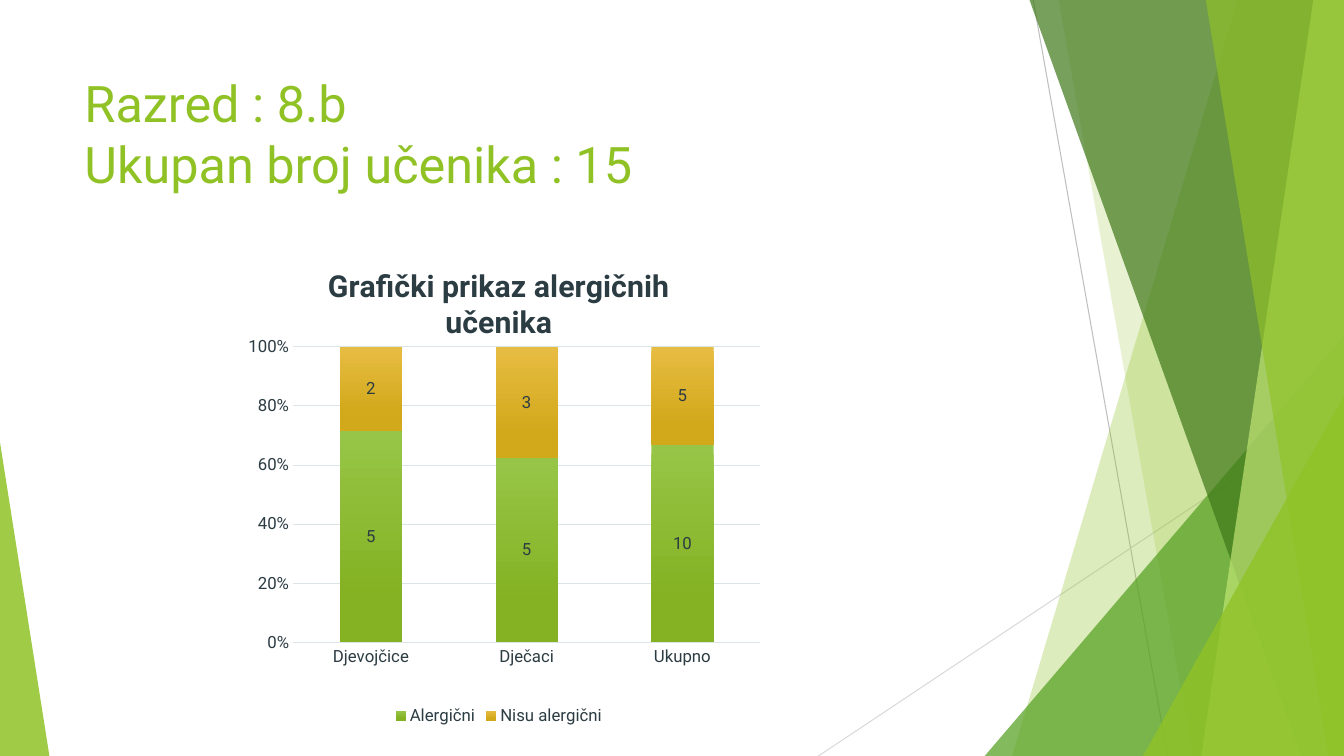
from lxml import etree
from pptx import Presentation
from pptx.chart.data import CategoryChartData
from pptx.dml.color import RGBColor
from pptx.enum.chart import XL_CHART_TYPE as ChartType
from pptx.enum.chart import XL_LABEL_POSITION as LabelPos
from pptx.enum.chart import XL_LEGEND_POSITION as LegendPos
from pptx.enum.chart import XL_TICK_MARK as TickMark
from pptx.enum.shapes import MSO_CONNECTOR as Connector
from pptx.enum.shapes import MSO_SHAPE as Shape
from pptx.enum.text import MSO_ANCHOR as Anchor
from pptx.oxml import parse_xml
from pptx.oxml.ns import nsdecls, qn
from pptx.util import Pt

WIDTH, HEIGHT = 960, 540
TOP = -0.6
FONT = "Roboto"

GREEN = RGBColor(0x90, 0xC2, 0x26)
LEAF = RGBColor(0x54, 0xA0, 0x21)
FOREST = RGBColor(0x3F, 0x78, 0x19)
LIME = RGBColor(0xC0, 0xE4, 0x74)
MID_GRAY = RGBColor(0xBF, 0xBF, 0xBF)
LIGHT_GRAY = RGBColor(0xD9, 0xD9, 0xD9)
SLATE = RGBColor(0x2C, 0x3C, 0x43)
GRID = RGBColor(0xDB, 0xE4, 0xE7)

# Series: name, values, gradient from top to bottom
SERIES = [
    ("Alergični", (5, 5, 10), (RGBColor(0x97, 0xC5, 0x47), RGBColor(0x84, 0xB2, 0x23))),
    ("Nisu alergični", (2, 3, 5), (RGBColor(0xE7, 0xBC, 0x43), RGBColor(0xD2, 0xA9, 0x1B))),
]


def style_font(font, size, color, bold=False):
    font.name, font.size, font.bold = FONT, Pt(size), bold
    font.color.rgb = color


def style_line(line, color):
    line.color.rgb = color
    line.width = Pt(0.75)


def tint(shape, color, opacity):
    """Fill a shape with a see-through colour and no outline."""
    shape.shadow.inherit = False
    shape.line.fill.background()
    shape.fill.solid()
    shape.fill.fore_color.rgb = color
    rgb = shape.fill._xPr.find(".//" + qn("a:srgbClr"))
    etree.SubElement(rgb, qn("a:alpha")).set("val", str(opacity * 1000))


def add_ray(slide, start, end, color):
    ray = slide.shapes.add_connector(Connector.STRAIGHT, *map(Pt, start + end))
    style_line(ray.line, color)
    etree.SubElement(ray._element.spPr, qn("a:effectLst"))


def add_band(slide, top_x, bottom_x, color, opacity):
    """Band from a slanted left edge to the right side of the slide."""
    corners = [(top_x, TOP), (WIDTH, TOP), (WIDTH, HEIGHT), (bottom_x, HEIGHT)]
    first, *others = [(Pt(x), Pt(y)) for x, y in corners]
    outline = slide.shapes.build_freeform(*first, scale=1.0)
    outline.add_line_segments(others, close=True)
    tint(outline.convert_to_shape(), color, opacity)


def add_wedge(slide, left, top, width, apex, color, opacity):
    """Triangle standing on the bottom edge of the slide."""
    wedge = slide.shapes.add_shape(
        Shape.ISOSCELES_TRIANGLE, Pt(left), Pt(top), Pt(width), Pt(HEIGHT - top))
    wedge.adjustments[0] = apex
    tint(wedge, color, opacity)


def add_text(slide, text, left, top, width, height, size, color):
    frame = slide.shapes.add_textbox(Pt(left), Pt(top), Pt(width), Pt(height)).text_frame
    frame.word_wrap = True
    frame.vertical_anchor = Anchor.TOP
    paragraph = frame.paragraphs[0]
    paragraph.text = text
    for run in paragraph.runs:
        style_font(run.font, size, color)


def style_axis(axis):
    axis.major_tick_mark = axis.minor_tick_mark = TickMark.NONE
    style_font(axis.tick_labels.font, 12, SLATE)


def style_series(series, shades):
    fill = series.format.fill
    fill.gradient()
    fill.gradient_angle = 270
    for stop, shade, position in zip(fill.gradient_stops, shades, (0, 0.78)):
        stop.color.rgb = shade
        stop.position = position
    labels = series.data_labels
    labels.show_value = True
    labels.position = LabelPos.CENTER
    style_font(labels.font, 12, SLATE)


def place_plot(chart, x, y, w, h):
    """Fix the inner plot area, as shares of the chart."""
    plot_area = chart._chartSpace.chart.plotArea
    for old in plot_area.findall(qn("c:layout")):
        plot_area.remove(old)
    sizes = "".join(f'<c:{tag} val="{share}"/>' for tag, share in zip("xywh", (x, y, w, h)))
    plot_area.insert(0, parse_xml(
        f'<c:layout {nsdecls("c")}><c:manualLayout><c:layoutTarget val="inner"/>'
        f'<c:xMode val="edge"/><c:yMode val="edge"/>{sizes}</c:manualLayout></c:layout>'))


def add_allergy_chart(slide, left, top, width, height):
    counts = CategoryChartData()
    counts.categories = ["Djevojčice", "Dječaci", "Ukupno"]
    for name, values, _ in SERIES:
        counts.add_series(name, values)
    chart = slide.shapes.add_chart(
        ChartType.COLUMN_STACKED_100, Pt(left), Pt(top), Pt(width), Pt(height), counts).chart
    style_font(chart.font, 12, SLATE)

    # Title and legend
    heading = chart.chart_title.text_frame.paragraphs[0]
    heading.text = "Grafički prikaz alergičnih učenika"
    style_font(heading.runs[0].font, 21.6, SLATE, bold=True)
    chart.chart_title.include_in_layout = False
    chart.has_legend = True
    chart.legend.position = LegendPos.BOTTOM
    chart.legend.include_in_layout = False
    style_font(chart.legend.font, 12, SLATE)

    # Axes
    style_axis(chart.category_axis)
    style_line(chart.category_axis.format.line, GRID)
    shares = chart.value_axis
    style_axis(shares)
    shares.minimum_scale, shares.maximum_scale, shares.major_unit = 0, 1, 0.2
    shares.tick_labels.number_format = "0%"
    shares.tick_labels.number_format_is_linked = False
    shares.format.line.fill.background()
    style_line(shares.major_gridlines.format.line, GRID)

    # Columns
    columns = chart.plots[0]
    columns.gap_width, columns.overlap = 150, 100
    columns.vary_by_categories = False
    for series, (_, _, shades) in zip(columns.series, SERIES):
        style_series(series, shades)
    place_plot(chart, 0.13, 0.21, 0.84, 0.61)


def main():
    deck = Presentation()
    deck.slide_width, deck.slide_height = Pt(WIDTH), Pt(HEIGHT)
    slide = deck.slides.add_slide(deck.slide_layouts[6])

    # Background facets
    add_ray(slide, (738, 0), (834, HEIGHT), MID_GRAY)
    add_ray(slide, (WIDTH, 290), (584.6, HEIGHT), LIGHT_GRAY)
    add_band(slide, 884.2, 723, GREEN, 30)
    add_band(slide, 756, 851.8, GREEN, 20)
    add_wedge(slide, 703.4, 239.8, 256.6, 1, LEAF, 72)
    add_band(slide, 735.2, 929.5, FOREST, 70)
    add_band(slide, 938.2, 858.2, LIME, 70)
    add_band(slide, 861.2, 949, GREEN, 65)
    add_wedge(slide, 816.5, 283, 143.5, 1, GREEN, 80)
    add_wedge(slide, 0, 316, 35.3, 0, GREEN, 85)

    # Content
    add_text(slide, "Razred : 8.b\nUkupan broj učenika : 15",
             53.3, 48.2, 676.8, 103.7, size=36, color=GREEN)
    add_allergy_chart(slide, 157.7, 175, 397.4, 346.3)

    deck.save("out.pptx")


if __name__ == "__main__":
    main()
